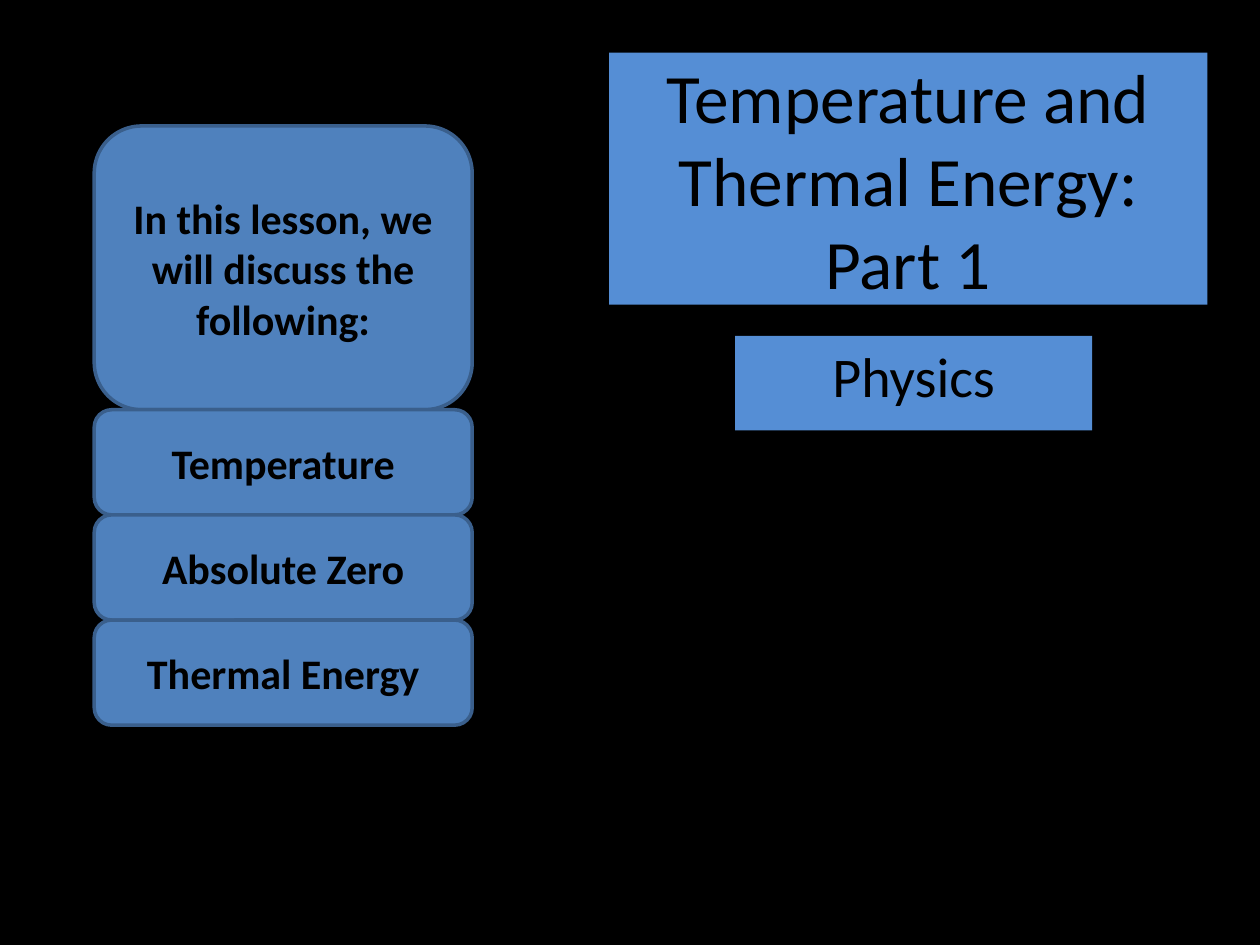
from pptx import Presentation
from pptx.dml.color import RGBColor
from pptx.enum.shapes import MSO_SHAPE as SHAPE
from pptx.enum.text import MSO_ANCHOR as ANCHOR, MSO_AUTO_SIZE as AUTO, PP_ALIGN as ALIGN
from pptx.util import Cm, Pt


def color(value):
    return RGBColor.from_string(value)


class Deck:
    font = "Calibri"
    ink = "000000"
    panel = "558ED5"
    box_fill = "4F81BD"
    box_line = "3A5F8C"

    def __init__(self, prs):
        self.s = prs.slides.add_slide(prs.slide_layouts[5])
        fill = self.s.background.fill
        fill.solid()
        fill.fore_color.rgb = color("000000")

    def add_text(self, sp, lines, size, bold=False, anchor=ANCHOR.MIDDLE):
        tf = sp.text_frame
        tf.word_wrap = True
        tf.auto_size = AUTO.NONE
        tf.vertical_anchor = anchor
        p = tf.paragraphs[0]
        p.alignment = ALIGN.CENTER
        for i, line in enumerate(lines):
            if i:
                p.add_line_break()
            r = p.add_run()
            r.text = line
            r.font.name = self.font
            r.font.size = Pt(size)
            r.font.bold = bold
            r.font.color.rgb = color(self.ink)

    def paint(self, sp, value):
        sp.fill.solid()
        sp.fill.fore_color.rgb = color(value)

    def title(self, x, y, w, h, lines):
        sp = self.s.shapes.title
        sp.left, sp.top, sp.width, sp.height = Cm(x), Cm(y), Cm(w), Cm(h)
        self.paint(sp, self.panel)
        self.add_text(sp, lines, 39.6)

    def subtitle(self, x, y, w, h, text):
        sp = self.s.shapes.add_textbox(Cm(x), Cm(y), Cm(w), Cm(h))
        self.paint(sp, self.panel)
        self.add_text(sp, [text], 32, anchor=ANCHOR.TOP)

    def box(self, x, y, w, h, text):
        sp = self.s.shapes.add_shape(SHAPE.ROUNDED_RECTANGLE, Cm(x), Cm(y), Cm(w), Cm(h))
        sp.shadow.inherit = False
        self.paint(sp, self.box_fill)
        sp.line.color.rgb = color(self.box_line)
        sp.line.width = Pt(2)
        self.add_text(sp, [text], 24, bold=True)


def main():
    prs = Presentation()
    prs.slide_width, prs.slide_height = Cm(25.4), Cm(19.05)
    deck = Deck(prs)

    # Title and subject
    deck.title(12.28, 1.06, 12.06, 5.08, ["Temperature and Thermal Energy:", "Part 1"])
    deck.subtitle(14.82, 6.77, 7.2, 1.91, "Physics")

    # Lesson outline: a heading with its topics stacked below
    left, top, width, heading_h, topic_h = 1.9, 2.54, 7.62, 5.72, 2.12
    deck.box(left, top, width, heading_h, "In this lesson, we will discuss the following:")
    for i, topic in enumerate(["Temperature", "Absolute Zero", "Thermal Energy"]):
        deck.box(left, top + heading_h + i * topic_h, width, topic_h, topic)

    prs.save("out.pptx")


if __name__ == "__main__":
    main()
